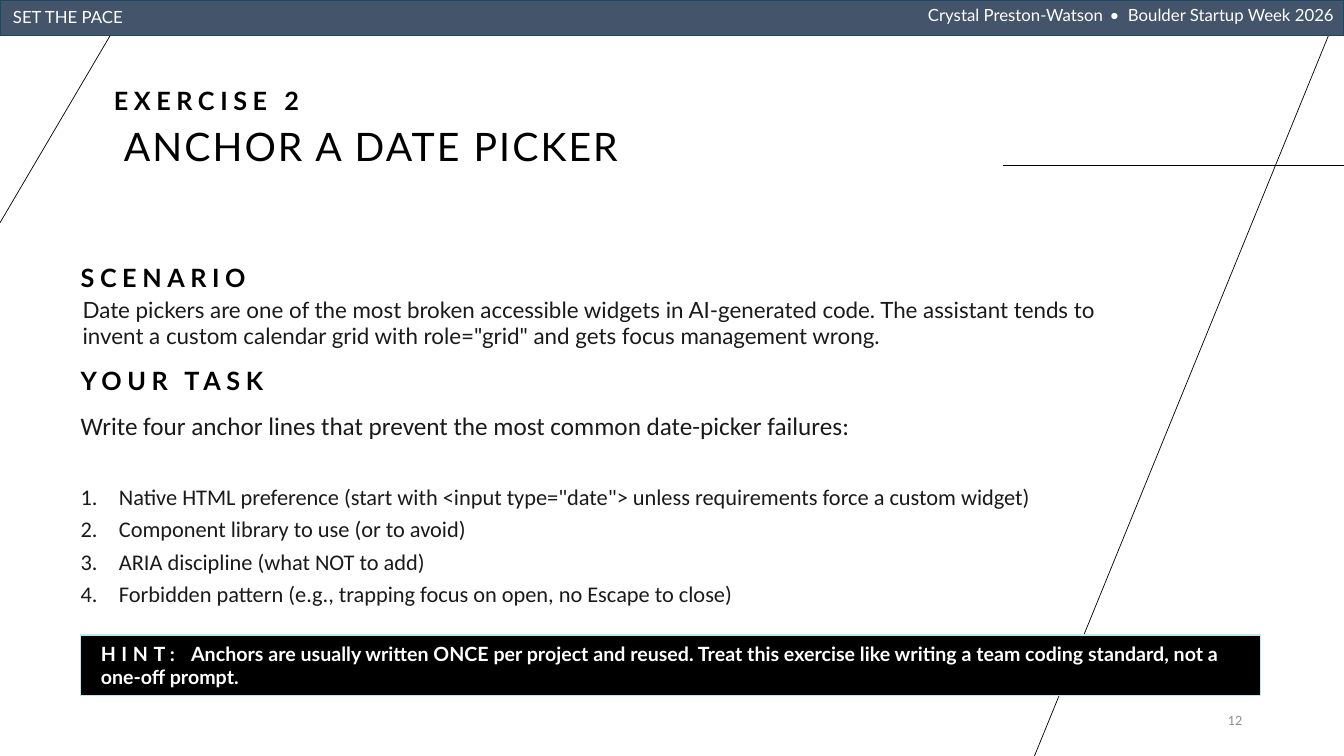
from dataclasses import dataclass

from lxml import etree
from pptx import Presentation
from pptx.dml.color import RGBColor
from pptx.enum.shapes import MSO_CONNECTOR, MSO_SHAPE
from pptx.enum.text import MSO_ANCHOR, PP_ALIGN
from pptx.oxml.ns import qn
from pptx.util import Inches, Pt

LEFT, RIGHT = PP_ALIGN.LEFT, PP_ALIGN.RIGHT
TOP, MIDDLE = MSO_ANCHOR.TOP, MSO_ANCHOR.MIDDLE
RECTANGLE, STRAIGHT = MSO_SHAPE.RECTANGLE, MSO_CONNECTOR.STRAIGHT


@dataclass(frozen=True)
class Theme:
    black: RGBColor = RGBColor.from_string("000000")
    white: RGBColor = RGBColor.from_string("FFFFFF")
    body: RGBColor = RGBColor.from_string("1A1A1A")
    gray: RGBColor = RGBColor.from_string("8C8C8C")
    header: RGBColor = RGBColor.from_string("44546A")
    header_line: RGBColor = RGBColor.from_string("1B4965")
    hint_line: RGBColor = RGBColor.from_string("BEE9E8")
    font: str = "Lato"
    task_font: str = "Calibri"
    title_size: float = 28
    heading_size: float = 18
    body_size: float = 16
    hint_size: float = 14
    header_size: float = 12
    number_size: float = 9


theme = Theme()


def add_text(shape, runs, size, color, font=theme.font, bold=False, align=LEFT,
             anchor=MIDDLE, inset=(0, 0), after=0, line_spacing=None,
             numbered=False, new_paragraph=False):
    """Write one paragraph; runs holds (text, letter spacing in points) pairs."""
    frame = shape.text_frame
    frame.word_wrap = True
    frame.vertical_anchor = anchor
    frame.margin_left = frame.margin_right = Inches(inset[0])
    frame.margin_top = frame.margin_bottom = Inches(inset[1])
    paragraph = frame.add_paragraph() if new_paragraph else frame.paragraphs[0]
    paragraph.alignment = align
    paragraph.space_after = Pt(after)
    if line_spacing:
        paragraph.line_spacing = line_spacing
    if numbered:
        properties = paragraph._p.get_or_add_pPr()
        properties.set("marL", str(Inches(0.38)))
        properties.set("indent", str(Inches(-0.38)))
        etree.SubElement(properties, qn("a:buAutoNum"), type="arabicPeriod")
    for text, spacing in runs:
        run = paragraph.add_run()
        run.text = text
        run.font.name = font
        run.font.size = Pt(size)
        run.font.bold = bold
        run.font.color.rgb = color
        if spacing:
            run._r.get_or_add_rPr().set("spc", str(int(spacing * 100)))


def add_bar(left, top, width, height, fill, line):
    bar = slide.shapes.add_shape(
        RECTANGLE, Inches(left), Inches(top), Inches(width), Inches(height))
    bar.shadow.inherit = False
    bar.fill.solid()
    bar.fill.fore_color.rgb = fill
    bar.line.color.rgb = line
    bar.line.width = Pt(1)
    return bar


presentation = Presentation()
presentation.slide_width = Inches(13.33)
presentation.slide_height = Inches(7.5)
slide = presentation.slides.add_slide(presentation.slide_layouts[6])

# Decorative lines
for x1, y1, x2, y2 in [(9.95, 1.64, 13.33, 1.64), (13.32, 0, 10.26, 7.5), (0, 2.21, 1.3, 0)]:
    connector = slide.shapes.add_connector(
        STRAIGHT, Inches(x1), Inches(y1), Inches(x2), Inches(y2))
    connector.line.color.rgb = theme.black
    connector.line.width = Pt(0.5)
    etree.SubElement(connector._element.spPr, qn("a:effectLst"))

# Bars
hint_bar = add_bar(0.8, 6.3, 11.7, 0.6, theme.black, theme.hint_line)
add_text(hint_bar, [("HINT: ", 4), (
    "Anchors are usually written ONCE per project and reused. Treat this exercise "
    "like writing a team coding standard, not a one-off prompt.", 0)],
    theme.hint_size, theme.white, bold=True, inset=(0.2, 0))
header_bar = add_bar(0, 0, 13.33, 0.35, theme.header, theme.header_line)
add_text(header_bar, [("Crystal Preston-Watson", 0), (" • ", 1.5), ("Boulder Startup Week 2026", 0)],
         theme.header_size, theme.white, align=RIGHT, anchor=TOP, inset=(0.1, 0.05))

# Single-paragraph text boxes
heading = {"size": theme.heading_size, "color": theme.black, "bold": True}
for (left, top, width, height), text, spacing, style in [
    ((0.03, 0.02, 6.68, 0.3), "SET THE PACE", 0,
     {"size": theme.header_size, "color": theme.white, "anchor": TOP, "inset": (0.1, 0.05)}),
    ((1.13, 0.85, 11.7, 0.3), "EXERCISE 2", 4, heading),
    ((1.13, 1.2, 8.45, 0.55), "ANCHOR A DATE PICKER", 1.5,
     {"size": theme.title_size, "color": theme.black, "inset": (0.1, 0.05), "line_spacing": 0.9}),
    ((0.8, 2.6, 11.7, 0.3), "SCENARIO", 4, heading),
    ((0.82, 2.95, 10.53, 0.5),
     "Date pickers are one of the most broken accessible widgets in AI-generated code. "
     "The assistant tends to invent a custom calendar grid with role=\"grid\" and gets "
     "focus management wrong.", 0,
     {"size": theme.body_size, "color": theme.body}),
    ((0.8, 3.62, 11.7, 0.3), "YOUR TASK", 4, heading),
    ((11.34, 6.95, 1.08, 0.4), "12", 0,
     {"size": theme.number_size, "color": theme.gray, "align": RIGHT, "inset": (0.1, 0.05)}),
]:
    box = slide.shapes.add_textbox(Inches(left), Inches(top), Inches(width), Inches(height))
    add_text(box, [(text, spacing)], **style)

# Task and numbered list
task_box = slide.shapes.add_textbox(Inches(0.8), Inches(3.8), Inches(11.7), Inches(2.5))
add_text(task_box, [("Write four anchor lines that prevent the most common date-picker failures:", 0)],
         theme.heading_size, theme.body, font=theme.task_font, after=30)
for anchor_line in [
    "Native HTML preference (start with <input type=\"date\"> unless requirements force a custom widget)",
    "Component library to use (or to avoid)",
    "ARIA discipline (what NOT to add)",
    "Forbidden pattern (e.g., trapping focus on open, no Escape to close)",
]:
    add_text(task_box, [(anchor_line, 0)], theme.body_size, theme.body,
             font=theme.task_font, after=4, numbered=True, new_paragraph=True)

presentation.save("out.pptx")
